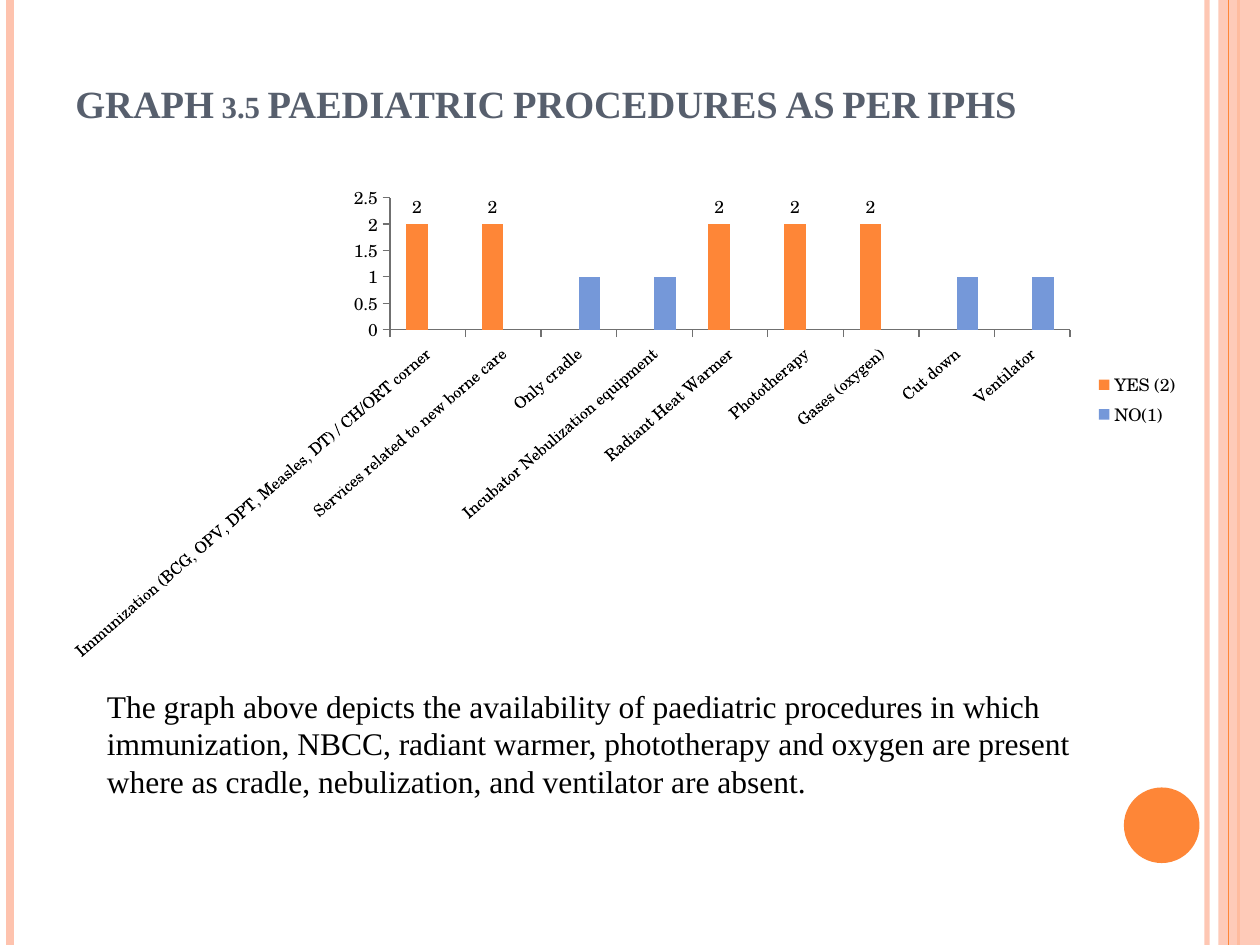
from dataclasses import dataclass
from typing import Optional

from lxml import etree
from pptx import Presentation
from pptx.chart.data import CategoryChartData
from pptx.dml.color import RGBColor
from pptx.enum.chart import XL_CHART_TYPE, XL_LABEL_POSITION, XL_LEGEND_POSITION, XL_TICK_MARK
from pptx.enum.shapes import MSO_CONNECTOR, MSO_SHAPE
from pptx.enum.text import MSO_ANCHOR, MSO_AUTO_SIZE
from pptx.oxml.ns import qn
from pptx.util import Inches, Pt

COLUMNS = XL_CHART_TYPE.COLUMN_CLUSTERED
OUTSIDE = XL_TICK_MARK.OUTSIDE
RIGHT = XL_LEGEND_POSITION.RIGHT
LABEL_ABOVE = XL_LABEL_POSITION.OUTSIDE_END
STRAIGHT = MSO_CONNECTOR.STRAIGHT
RECT, OVAL = MSO_SHAPE.RECTANGLE, MSO_SHAPE.OVAL
BOTTOM, TOP = MSO_ANCHOR.BOTTOM, MSO_ANCHOR.TOP
GROW = MSO_AUTO_SIZE.SHAPE_TO_FIT_TEXT

WIDTH, HEIGHT = 10, 7.5


@dataclass(frozen=True)
class Theme:
    accent: str = "FE8637"
    pale: str = "FEC3AE"
    blue: str = "7598D9"
    heading: str = "575F6D"
    text: str = "000000"
    axis: str = "707070"
    font: str = "Times New Roman"
    chart_font: str = "TeX Gyre Schola"
    title_size: int = 22
    body_size: int = 18
    chart_size: int = 10
    category_size: float = 9.2


@dataclass(frozen=True)
class Box:
    """Place and size in inches."""
    x: float
    y: float
    w: float
    h: float

    def emu(self) -> tuple:
        return tuple(Inches(v) for v in (self.x, self.y, self.w, self.h))


@dataclass(frozen=True)
class Stripe:
    """Vertical line over the whole slide height."""
    x: float
    color: str
    weight: float
    opacity: int = 100


@dataclass(frozen=True)
class Procedure:
    name: str
    present: bool


THEME = Theme()
STRIPES_BELOW = [
    Stripe(9.58, THEME.pale, 3, 93),
    Stripe(0.08, THEME.pale, 4.5),
    Stripe(9.83, THEME.accent, 1.5),
]
STRIPE_ABOVE = Stripe(9.75, THEME.accent, 0.75)
PROCEDURES = [
    Procedure("Immunization (BCG, OPV, DPT, Measles, DT) / CH/ORT corner", True),
    Procedure("Services related to new borne care", True),
    Procedure("Only cradle", False),
    Procedure("Incubator Nebulization equipment", False),
    Procedure("Radiant Heat Warmer", True),
    Procedure("Phototherapy", True),
    Procedure("Gases (oxygen)", True),
    Procedure("Cut down", False),
    Procedure("Ventilator", False),
]
TITLE = "GRAPH 3.5 PAEDIATRIC PROCEDURES AS PER IPHS"
BODY = ("The graph above depicts the availability of paediatric procedures in which "
        "immunization, NBCC, radiant warmer, phototherapy and oxygen are present "
        "where as cradle, nebulization, and ventilator are absent.")


def rgb(color: str) -> RGBColor:
    return RGBColor.from_string(color)


def set_opacity(element, percent: int) -> None:
    if percent < 100:
        clr = next(element.iter(qn("a:srgbClr")))
        etree.SubElement(clr, qn("a:alpha"), val=str(percent * 1000))


def add_stripe(slide, stripe: Stripe) -> None:
    x = Inches(stripe.x)
    line = slide.shapes.add_connector(STRAIGHT, x, 0, x, Inches(HEIGHT))
    line.line.color.rgb = rgb(stripe.color)
    line.line.width = Pt(stripe.weight)
    sp_pr = line._element.spPr
    set_opacity(sp_pr, stripe.opacity)
    etree.SubElement(sp_pr, qn("a:effectLst"))


def add_block(slide, kind, box: Box, color: str, opacity: int = 100) -> None:
    sp = slide.shapes.add_shape(kind, *box.emu())
    sp.shadow.inherit = False
    sp.fill.solid()
    sp.fill.fore_color.rgb = rgb(color)
    sp.line.fill.background()
    set_opacity(sp._element.spPr, opacity)


def add_text(slide, box: Box, text: str, size: int, color: str, anchor=TOP):
    tf = slide.shapes.add_textbox(*box.emu()).text_frame
    tf.word_wrap = True
    tf.vertical_anchor = anchor
    r = tf.paragraphs[0].add_run()
    r.text = text
    r.font.name, r.font.size = THEME.font, Pt(size)
    r.font.color.rgb = rgb(color)
    return tf, r


def set_layout(element, x: float, y: float, w: Optional[float] = None,
               h: Optional[float] = None, index: int = 0) -> None:
    """Place a chart part by shares of the chart's size."""
    for old in element.findall(qn("c:layout")):
        element.remove(old)
    layout = etree.Element(qn("c:layout"))
    manual = etree.SubElement(layout, qn("c:manualLayout"))
    rules = {"xMode": "edge", "yMode": "edge", "x": x, "y": y}
    if w is not None:
        rules = {"layoutTarget": "inner", **rules, "w": w, "h": h}
    for tag, val in rules.items():
        etree.SubElement(manual, qn(f"c:{tag}"), val=str(val))
    element.insert(index, layout)


def add_procedure_chart(slide, box: Box) -> None:
    data = CategoryChartData()
    data.categories = [p.name for p in PROCEDURES]
    data.add_series("YES (2)", [2 if p.present else None for p in PROCEDURES])
    data.add_series("NO(1)", [None if p.present else 1 for p in PROCEDURES])
    chart = slide.shapes.add_chart(COLUMNS, *box.emu(), data).chart
    chart.has_title = False
    chart.font.name, chart.font.size = THEME.chart_font, Pt(THEME.chart_size)
    chart.font.color.rgb = rgb(THEME.text)

    # Columns and their labels
    plot = chart.plots[0]
    plot.gap_width, plot.overlap, plot.vary_by_categories = 150, 0, False
    for series, color in zip(plot.series, (THEME.accent, THEME.blue)):
        series.format.fill.solid()
        series.format.fill.fore_color.rgb = rgb(color)
    labels = plot.series[0].data_labels
    labels.show_value, labels.position = True, LABEL_ABOVE

    # Axes; the category names are slanted and small enough to show in full
    scale, names = chart.value_axis, chart.category_axis
    for axis, size in ((scale, THEME.chart_size), (names, THEME.category_size)):
        axis.has_major_gridlines = False
        axis.major_tick_mark = OUTSIDE
        axis.format.line.color.rgb = rgb(THEME.axis)
        axis.tick_labels.font.size = Pt(size)
    scale.minimum_scale, scale.maximum_scale, scale.major_unit = 0, 2.5, 0.5
    body = names._element.find(qn("c:txPr")).find(qn("a:bodyPr"))
    body.set("rot", str(-41 * 60000))

    # Legend and plot area
    chart.has_legend = True
    chart.legend.position = RIGHT
    chart.legend.include_in_layout = False
    set_layout(chart.legend._element, 0.91, 0.38, index=1)
    set_layout(chart._chartSpace.chart.plotArea, 0.3, 0.02, 0.59, 0.28)


def main() -> None:
    prs = Presentation()
    prs.slide_width, prs.slide_height = Inches(WIDTH), Inches(HEIGHT)
    slide = prs.slides.add_slide(prs.slide_layouts[6])

    # Side decoration
    for stripe in STRIPES_BELOW:
        add_stripe(slide, stripe)
    add_block(slide, RECT, Box(9.67, 0, WIDTH - 9.67, HEIGHT), THEME.pale, 87)
    add_stripe(slide, STRIPE_ABOVE)
    add_block(slide, OVAL, Box(8.92, 6.25, 0.6, 0.6), THEME.accent)

    # Title in small capitals
    tf, r = add_text(slide, Box(0.5, 0.3, 8.17, 1.25), TITLE,
                     THEME.title_size, THEME.heading, BOTTOM)
    tf.margin_bottom = Inches(0.55)
    r.font.bold = True
    r.font._element.set("cap", "small")

    # Chart and comment
    add_procedure_chart(slide, Box(0.35, 1.47, 9.15, 3.78))
    tf, r = add_text(slide, Box(0.75, 5.4, 8.5, 1.01), BODY, THEME.body_size, THEME.text)
    tf.auto_size = GROW

    prs.save("out.pptx")


if __name__ == "__main__":
    main()
